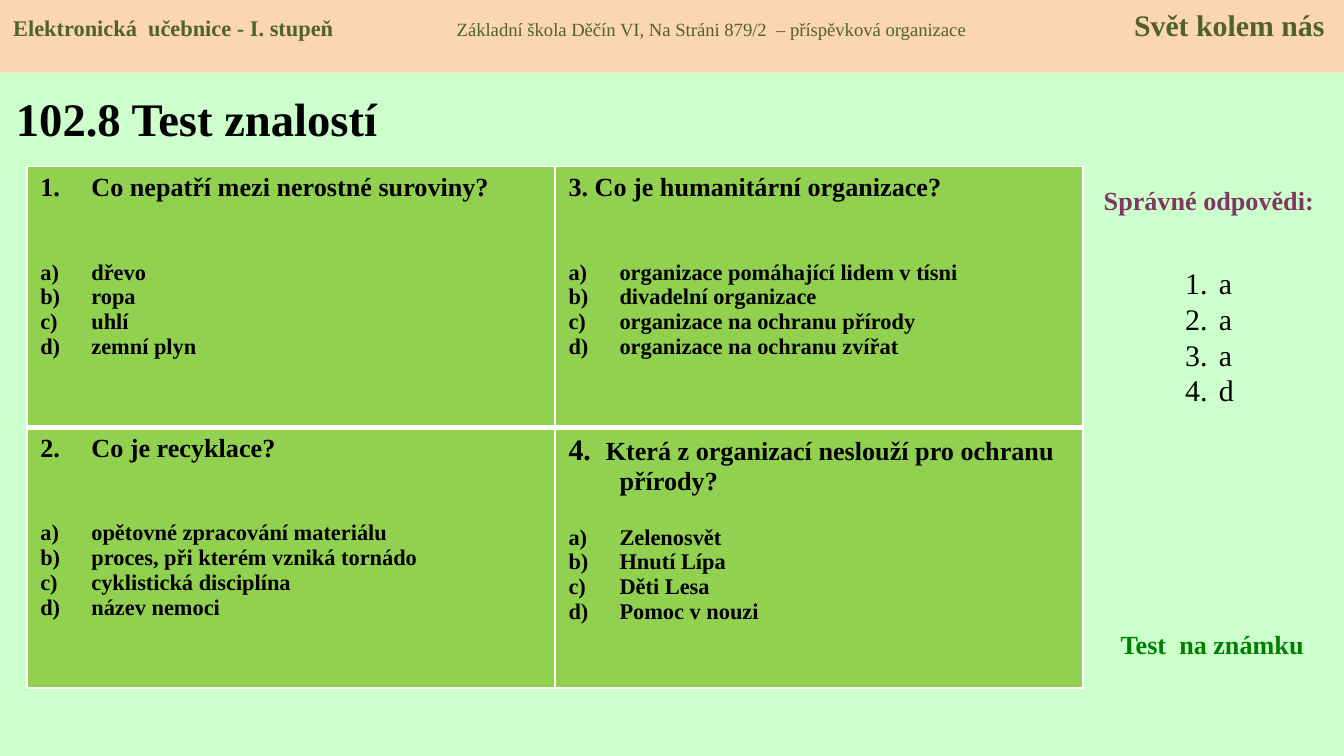
"""Build the knowledge test slide 102.8 with its question grid and answer key."""
import pptx
import pptx.dml.color
import pptx.enum.shapes
import pptx.enum.text
import pptx.oxml.ns
import pptx.util
from lxml import etree

RGB = pptx.dml.color.RGBColor
ALIGN = pptx.enum.text.PP_ALIGN
ANCHOR = pptx.enum.text.MSO_ANCHOR
Inches, Pt = pptx.util.Inches, pptx.util.Pt

MINT = RGB(0xCC, 0xFF, 0xCC)
PEACH = RGB(0xFC, 0xD5, 0xB5)
LIME = RGB(0x92, 0xD0, 0x50)
WHITE = RGB(0xFF, 0xFF, 0xFF)
BLACK = RGB(0, 0, 0)
OLIVE = RGB(0x4F, 0x62, 0x28)
PLUM = RGB(0x81, 0x37, 0x63)
GREEN = RGB(0, 0x80, 0)

FONT = "Times New Roman"
WIDTH = 10
HEIGHT = WIDTH * 9 / 16
BAND_HEIGHT = 0.54
GRID_LEFT, GRID_TOP, COL_WIDTH, ROW_HEIGHT = 0.2, 1.24, 3.93, 1.94
INDENT = 0.38

HEADER = [
    ("Elektronická  učebnice - I. stupeň", 12, True),
    ("\tZákladní škola Děčín VI, Na Stráni 879/2  – příspěvková organizace", 10, False),
    ("\tSvět kolem nás", 16, True),
]
HEADER_TABS = [3.3, 8.34]

LABELS = [
    ("102.8 Test znalostí", (0.02, 0.55, 3.19, 0.65), 25, BLACK, ALIGN.LEFT, ANCHOR.MIDDLE),
    ("Správné odpovědi:", (8.05, 1.32, 1.89, 0.34), 14, PLUM, ALIGN.CENTER, ANCHOR.TOP),
    ("Test  na známku", (8.24, 4.63, 1.57, 0.34), 14, GREEN, ALIGN.LEFT, ANCHOR.TOP),
]

QUESTIONS = [
    [
        dict(number=1, gap=31, runs=[("Co nepatří mezi nerostné suroviny?", 14)],
             options=["dřevo", "ropa", "uhlí", "zemní plyn"]),
        dict(number=None, gap=31, runs=[("3. Co je humanitární organizace?", 14)],
             options=["organizace pomáhající lidem v tísni", "divadelní organizace",
                      "organizace na ochranu přírody", "organizace na ochranu zvířat"]),
    ],
    [
        dict(number=2, gap=31, runs=[("Co je recyklace?", 14)],
             options=["opětovné zpracování materiálu", "proces, při kterém vzniká tornádo",
                      "cyklistická disciplína", "název nemoci"]),
        dict(number=None, gap=15.5,
             runs=[("4.  ", 16), ("Která z organizací neslouží pro ochranu přírody?", 14)],
             options=["Zelenosvět", "Hnutí Lípa", "Děti Lesa", "Pomoc v nouzi"]),
    ],
]
ANSWERS = ["a", "a", "a", "d"]


def add_child(parent, tag, **attrs):
    child = etree.SubElement(parent, pptx.oxml.ns.qn(tag))
    for name, value in attrs.items():
        child.set(name, str(value))
    return child


def add_run(p, text, size, color=BLACK, bold=True):
    r = p.add_run()
    r.text = text
    r.font.name, r.font.size, r.font.bold = FONT, Pt(size), bold
    r.font.color.rgb = color


def next_paragraph(tf):
    return tf.add_paragraph() if tf.paragraphs[0].runs else tf.paragraphs[0]


def hang(p, indent, scheme=None, start=1):
    pPr = p._p.get_or_add_pPr()
    pPr.set("marL", str(Inches(indent)))
    pPr.set("indent", str(-Inches(indent)))
    if scheme:
        add_child(pPr, "a:buFont", typeface=FONT)
        add_child(pPr, "a:buAutoNum", type=scheme, startAt=start)


def add_box(slide, box, anchor=ANCHOR.TOP):
    tf = slide.shapes.add_textbox(*map(Inches, box)).text_frame
    tf.word_wrap, tf.vertical_anchor = True, anchor
    return tf


def set_borders(cell, top, bottom):
    tcPr = cell._tc.get_or_add_tcPr()
    for side, width in (("L", 1), ("R", 1), ("T", top), ("B", bottom)):
        ln = add_child(tcPr, "a:ln" + side, w=Pt(width))
        add_child(add_child(ln, "a:solidFill"), "a:srgbClr", val=WHITE)


def fill_cell(cell, question):
    tf = cell.text_frame
    p = next_paragraph(tf)
    number = question["number"]
    hang(p, INDENT, "arabicPeriod" if number else None, number)
    for text, size in question["runs"]:
        add_run(p, text, size)
    for i, option in enumerate(question["options"]):
        p = next_paragraph(tf)
        p.space_before = Pt(0 if i else question["gap"])
        hang(p, INDENT, "alphaLcParenR")
        add_run(p, option, 12)


def add_questions(slide):
    rows, cols = len(QUESTIONS), len(QUESTIONS[0])
    box = (GRID_LEFT, GRID_TOP, cols * COL_WIDTH, rows * ROW_HEIGHT)
    table = slide.shapes.add_table(rows, cols, *map(Inches, box)).table
    for r, row in enumerate(QUESTIONS):
        table.rows[r].height = Inches(ROW_HEIGHT)
        for c, question in enumerate(row):
            cell = table.cell(r, c)
            set_borders(cell, 3 if r else 1, 1 if r else 3)
            cell.fill.solid()
            cell.fill.fore_color.rgb = LIME
            fill_cell(cell, question)


def add_header(slide):
    band = slide.shapes.add_shape(pptx.enum.shapes.MSO_SHAPE.RECTANGLE, 0, 0,
                                  Inches(WIDTH), Inches(BAND_HEIGHT))
    band.shadow.inherit = False
    band.fill.solid()
    band.fill.fore_color.rgb = PEACH
    band.line.fill.background()
    tf = band.text_frame
    tf.word_wrap, tf.vertical_anchor = True, ANCHOR.TOP
    p = tf.paragraphs[0]
    p.alignment = ALIGN.LEFT
    tabs = add_child(p._p.get_or_add_pPr(), "a:tabLst")
    for pos in HEADER_TABS:
        add_child(tabs, "a:tab", pos=Inches(pos), algn="l")
    for text, size, bold in HEADER:
        add_run(p, text, size, OLIVE, bold)


def main():
    prs = pptx.Presentation()
    prs.slide_width, prs.slide_height = Inches(WIDTH), Inches(HEIGHT)
    slide = prs.slides.add_slide(prs.slide_layouts[6])
    slide.background.fill.solid()
    slide.background.fill.fore_color.rgb = MINT

    for text, box, size, color, align, anchor in LABELS:
        p = add_box(slide, box, anchor).paragraphs[0]
        p.alignment = align
        add_run(p, text, size, color)

    add_questions(slide)

    tf = add_box(slide, (8.72, 1.92, 0.55, 1.72))
    for answer in ANSWERS:
        p = next_paragraph(tf)
        hang(p, 0.25, "arabicPeriod")
        add_run(p, answer, 16, bold=False)

    add_header(slide)
    prs.save("out.pptx")


if __name__ == "__main__":
    main()
